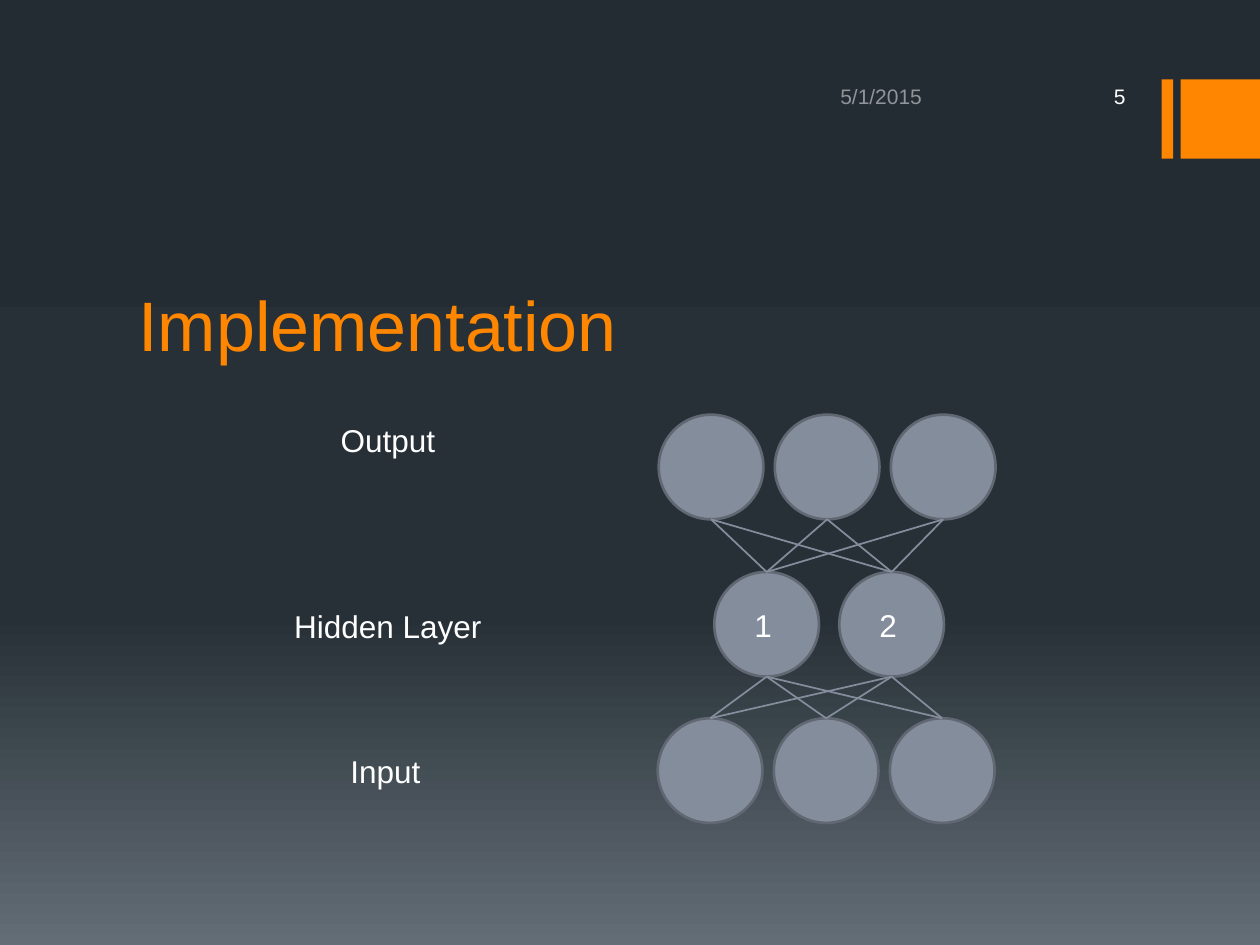
from copy import deepcopy

from lxml import etree
from pptx import Presentation
from pptx.dml.color import RGBColor
from pptx.enum.shapes import MSO_CONNECTOR, MSO_SHAPE
from pptx.enum.text import MSO_ANCHOR, MSO_AUTO_SIZE, PP_ALIGN
from pptx.oxml.ns import qn
from pptx.util import Cm, Pt

LEFT, CENTER, RIGHT = PP_ALIGN.LEFT, PP_ALIGN.CENTER, PP_ALIGN.RIGHT
TOP, MIDDLE, BOTTOM = MSO_ANCHOR.TOP, MSO_ANCHOR.MIDDLE, MSO_ANCHOR.BOTTOM
TITLE_ONLY = 5

ORANGE, WHITE, NODE, NODE_EDGE = "FF8600", "FFFFFF", "838D9B", "616873"
BACKGROUND = [(0, "242C33"), (0.65, "273037"), (1, "636D76")]

# All lengths are in centimetres.
ACCENT_BARS = [(23.42, 0.23), (23.8, 1.6)]  # left, width
ACCENT_TOP, ACCENT_HEIGHT = 1.6, 1.6

DIAMETER = 2.11
# Layers from the bottom up: label, label box, left of first node, top, step, node names
LAYERS = [
    ("Input", (3.96, 15.04), 13.26, 14.48, 2.34, ["", "", ""]),
    ("Hidden Layer", (4.01, 12.12), 14.4, 11.53, 2.52, ["1", "2"]),
    ("Output", (4.01, 8.36), 13.28, 8.36, 2.34, ["", "", ""]),
]
LABEL_WIDTH, LABEL_HEIGHT = 7.62, 1.02
NAME_WIDTH, NAME_INSET = 1.07, 0.56


def rgb(value):
    return RGBColor.from_string(value)


def write(shape, text, size, color=WHITE, align=LEFT, anchor=TOP):
    frame = shape.text_frame
    settings = {"word_wrap": True, "auto_size": MSO_AUTO_SIZE.NONE, "vertical_anchor": anchor}
    for name, value in settings.items():
        setattr(frame, name, value)
    paragraph = frame.paragraphs[0]
    paragraph.alignment = align
    run = paragraph.add_run()
    run.text = text
    for name, value in {"name": "Arial", "size": Pt(size)}.items():
        setattr(run.font, name, value)
    run.font.color.rgb = rgb(color)
    return run


def add_text(slide, box, text, size, **style):
    return write(slide.shapes.add_textbox(*map(Cm, box)), text, size, **style)


def add_filled(slide, kind, box, fill, edge=None):
    shape = slide.shapes.add_shape(kind, *map(Cm, box))
    shape.shadow.inherit = False
    shape.fill.solid()
    shape.fill.fore_color.rgb = rgb(fill)
    if edge:
        shape.line.color.rgb = rgb(edge)
        shape.line.width = Pt(1.5)
    else:
        shape.line.fill.background()


def add_link(slide, start, end):
    link = slide.shapes.add_connector(MSO_CONNECTOR.STRAIGHT, *map(Cm, start + end))
    link.line.color.rgb = rgb(NODE)
    link.line.width = Pt(1)
    etree.SubElement(link.element.spPr, qn("a:effectLst"))


def paint_background(slide):
    fill = slide.background.fill
    fill.gradient()
    fill.gradient_angle = 270
    stops = slide.element.find(".//" + qn("a:gsLst"))
    stops.insert(1, deepcopy(stops[0]))
    for stop, (position, color) in zip(fill.gradient_stops, BACKGROUND):
        stop.position = position
        stop.color.rgb = rgb(color)


def node_lefts(layer):
    _, _, left, _, step, names = layer
    return [left + i * step for i in range(len(names))]


def main():
    deck = Presentation()
    deck.slide_width, deck.slide_height = Cm(25.4), Cm(19.05)
    slide = deck.slides.add_slide(deck.slide_layouts[TITLE_ONLY])
    paint_background(slide)

    for left, width in ACCENT_BARS:
        add_filled(slide, MSO_SHAPE.RECTANGLE, (left, ACCENT_TOP, width, ACCENT_HEIGHT), ORANGE)

    title = slide.shapes.title
    title_box = {"left": 2.54, "top": 4.29, "width": 20.32, "height": 3.2}
    for name, value in title_box.items():
        setattr(title, name, Cm(value))
    write(title, "Implementation", 40, color=ORANGE, anchor=BOTTOM)

    date = add_text(slide, (16.69, 1.52, 3.3, 0.84), "5/1/2015", 12, anchor=MIDDLE)
    date_color = date.font.element if hasattr(date.font, "element") else date._r
    etree.SubElement(date_color.find(".//" + qn("a:srgbClr")), qn("a:alpha"), val="50000")
    add_text(slide, (20.32, 1.52, 2.62, 0.84), "5", 12, align=RIGHT, anchor=MIDDLE)

    for layer in LAYERS:
        for left in node_lefts(layer):
            add_filled(slide, MSO_SHAPE.OVAL, (left, layer[3], DIAMETER, DIAMETER), NODE, NODE_EDGE)

    for lower, upper in zip(LAYERS, LAYERS[1:]):
        for low in node_lefts(lower):
            for high in node_lefts(upper):
                add_link(slide, (low + DIAMETER / 2, lower[3]),
                         (high + DIAMETER / 2, upper[3] + DIAMETER))

    for layer in LAYERS:
        label, corner, _, top, _, names = layer
        for left, name in zip(node_lefts(layer), names):
            if name:
                box = (left + NAME_INSET, top + NAME_INSET, NAME_WIDTH, LABEL_HEIGHT)
                add_text(slide, box, name, 18)
        add_text(slide, corner + (LABEL_WIDTH, LABEL_HEIGHT), label, 18, align=CENTER)

    deck.save("out.pptx")


if __name__ == "__main__":
    main()
